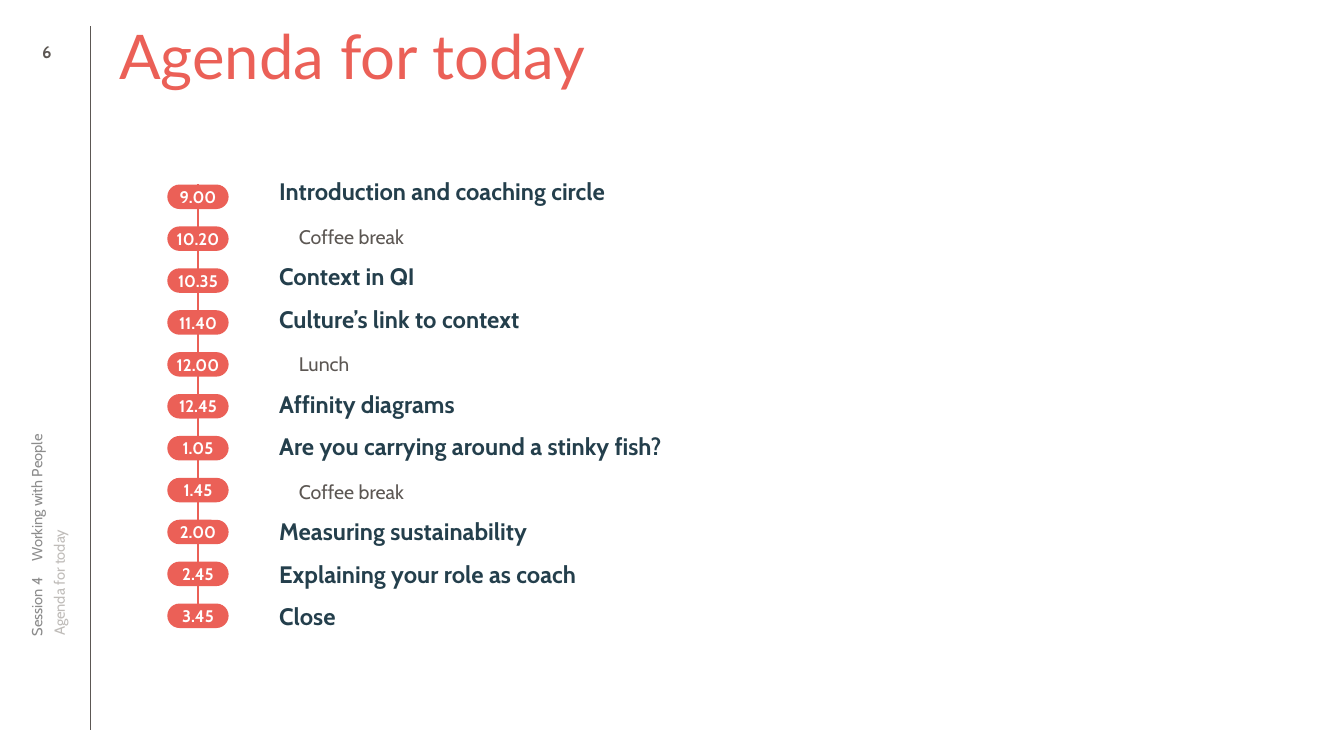
from lxml import etree
from pptx import Presentation
from pptx.dml.color import RGBColor
from pptx.enum.shapes import MSO_CONNECTOR, MSO_SHAPE
from pptx.enum.text import MSO_ANCHOR, MSO_AUTO_SIZE, PP_ALIGN
from pptx.oxml.ns import qn
from pptx.util import Pt

TOP, MIDDLE = MSO_ANCHOR.TOP, MSO_ANCHOR.MIDDLE
LEFT, CENTER = PP_ALIGN.LEFT, PP_ALIGN.CENTER
LINE, PILL = MSO_CONNECTOR.STRAIGHT, MSO_SHAPE.ROUNDED_RECTANGLE
NO_FIT = MSO_AUTO_SIZE.NONE

THEME = {
    "coral": RGBColor.from_string("EB6057"),
    "navy": RGBColor.from_string("243F4C"),
    "brown": RGBColor.from_string("5C5753"),
    "grey": RGBColor.from_string("8C8C8C"),
    "pale": RGBColor.from_string("BFBCB9"),
    "white": RGBColor.from_string("FFFFFF"),
    "title": 44, "topic": 17, "pause": 14, "label": 12, "side": 10.5,
    "head": "Lato", "body": "Cabin",
}

AGENDA = [
    ("9.00", "Introduction and coaching circle", False),
    ("10.20", "Coffee break", True),
    ("10.35", "Context in QI", False),
    ("11.40", "Culture’s link to context", False),
    ("12.00", "Lunch", True),
    ("12.45", "Affinity diagrams", False),
    ("1.05", "Are you carrying around a stinky fish?", False),
    ("1.45", "Coffee break", True),
    ("2.00", "Measuring sustainability", False),
    ("2.45", "Explaining your role as coach", False),
    ("3.45", "Close", False),
]


def setup(frame, anchor):
    frame.margin_left = frame.margin_right = 0
    frame.margin_top = frame.margin_bottom = 0
    frame.auto_size = NO_FIT
    frame.word_wrap = True
    frame.vertical_anchor = anchor
    return frame.paragraphs[0]


def say(para, text, size, color, bold=False, face="body"):
    run = para.add_run()
    run.text = text
    run.font.size = Pt(THEME[size])
    run.font.name = THEME[face]
    run.font.bold = bold
    run.font.color.rgb = THEME[color]


prs = Presentation()
prs.slide_width, prs.slide_height = Pt(960), Pt(540)
slide = prs.slides.add_slide(prs.slide_layouts[5])
shapes = slide.shapes

lines = []
for x, top, end, color, width in [
    (64.1, 18.7, 521.3, "brown", 0.25),
    (141.4, 131.8, 448.6, "coral", 1.5),
]:
    line = shapes.add_connector(LINE, Pt(x), Pt(top), Pt(x), Pt(end))
    line.line.color.rgb = THEME[color]
    line.line.width = Pt(width)
    etree.SubElement(line._element.spPr, qn("a:effectLst"))
    lines.append(line)
rail = lines[1]

title = shapes.title
title.left, title.top = Pt(85), Pt(18.7)
title.width, title.height = Pt(856), Pt(90)
para = setup(title.text_frame, TOP)
para.alignment = LEFT
para.line_spacing = 0.9
say(para, "Agenda for today", "title", "coral", face="head")

page = shapes.add_textbox(Pt(18.7), Pt(18.7), Pt(29.5), Pt(36.7))
para = setup(page.text_frame, MIDDLE)
para.alignment = CENTER
say(para, "6", "label", "brown", True)

for text, x, y, high, anchor, space, color in [
    ("Session 4\tWorking with People", -141.1, 280.1, 14.4, MIDDLE, 1.0, "grey"),
    ("Agenda for today", -124.6, 281.5, 10.8, TOP, 0.9, "pale"),
]:
    side = shapes.add_textbox(Pt(x), Pt(y), Pt(334.5), Pt(high))
    side.rotation = 270
    para = setup(side.text_frame, anchor)
    para.line_spacing = space
    if "\t" in text:
        tabs = etree.SubElement(para._p.get_or_add_pPr(), qn("a:tabLst"))
        etree.SubElement(tabs, qn("a:tab"), pos=str(Pt(53.5)), algn="l")
    say(para, text, "side", color)

body = shapes.add_textbox(Pt(198.7), Pt(130.3), Pt(742.3), Pt(385.2))
para = setup(body.text_frame, TOP)
pills = []
for i, (time, topic, pause) in enumerate(AGENDA):
    pill = shapes.add_shape(PILL, Pt(119.5), Pt(131.8 + i * 29.93), Pt(43.8), Pt(17.5))
    pill.adjustments[0] = 0.5
    pill.shadow.inherit = False
    pill.fill.solid()
    pill.fill.fore_color.rgb = THEME["coral"]
    pill.line.fill.background()
    label = setup(pill.text_frame, MIDDLE)
    label.alignment = CENTER
    say(label, time, "label", "white", True)
    pills.append(pill)

    if i:
        para = body.text_frame.add_paragraph()
        para.space_before = Pt(15 if pause else 12)
    para.space_after = Pt(2)
    para.line_spacing = 0.8
    para._p.get_or_add_pPr().set("marL", str(Pt(14.7 if pause else 0.7)))
    if pause:
        say(para, topic, "pause", "brown")
    else:
        say(para, topic, "topic", "navy", True)

rail.begin_connect(pills[0], 0)
rail.end_connect(pills[-1], 2)

prs.save("out.pptx")
